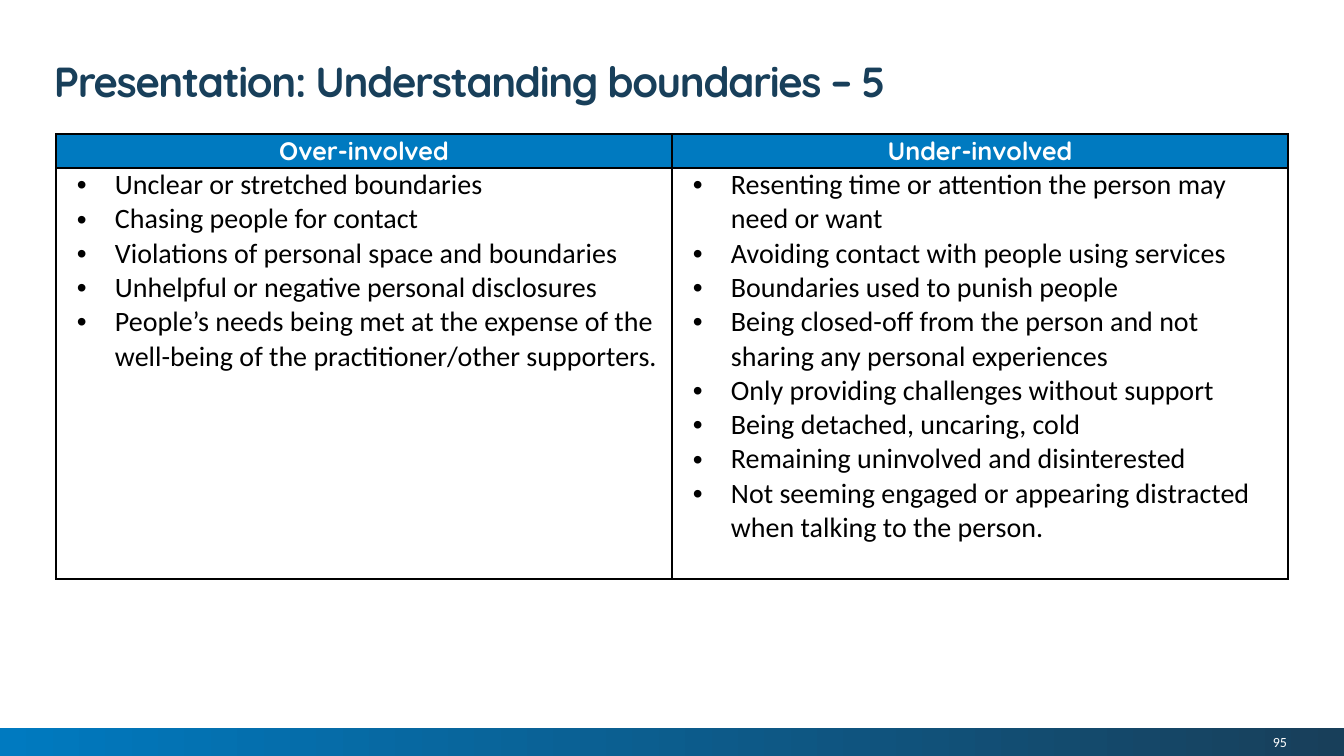
from lxml.etree import SubElement
from pptx import Presentation
from pptx.dml.color import RGBColor
from pptx.enum.shapes import MSO_SHAPE as Shape
from pptx.enum.text import MSO_ANCHOR as Anchor, PP_ALIGN as Align
from pptx.oxml.ns import qn
from pptx.util import Pt

PX = 914400 / 100.8
BLUE = RGBColor(0x00, 0x7A, 0xC0)
NAVY = RGBColor(0x18, 0x3F, 0x5A)
WHITE = RGBColor(0xFF, 0xFF, 0xFF)
BLACK = RGBColor(0x00, 0x00, 0x00)
HEADING_FONT = "Quicksand"
BODY_FONT = "Calibri"

COLUMNS = {
    "Over-involved": [
        "Unclear or stretched boundaries",
        "Chasing people for contact",
        "Violations of personal space and boundaries",
        "Unhelpful or negative personal disclosures",
        "People’s needs being met at the expense of the well-being of the "
        "practitioner/other supporters.",
    ],
    "Under-involved": [
        "Resenting time or attention the person may need or want",
        "Avoiding contact with people using services",
        "Boundaries used to punish people",
        "Being closed-off from the person and not sharing any personal experiences",
        "Only providing challenges without support",
        "Being detached, uncaring, cold",
        "Remaining uninvolved and disinterested",
        "Not seeming engaged or appearing distracted when talking to the person.",
    ],
}


def px(*lengths):
    """Turn pixel lengths into a list of EMU lengths."""
    return [round(length * PX) for length in lengths]


def style_runs(paragraph, font_name, size, color, bold=False):
    """Format every run of a paragraph."""
    for run in paragraph.runs:
        run.font.name = font_name
        run.font.size = Pt(size)
        run.font.bold = bold
        run.font.color.rgb = color


def add_text(slide, box, text, font_name, size, color, bold=False):
    """Add a one-paragraph text box and return its frame and paragraph."""
    text_frame = slide.shapes.add_textbox(*px(*box)).text_frame
    text_frame.word_wrap = True
    text_frame.text = text
    paragraph = text_frame.paragraphs[0]
    style_runs(paragraph, font_name, size, color, bold)
    return text_frame, paragraph


def add_title(slide, text):
    """Add the slide title with tightened letters."""
    paragraph = add_text(slide, (44, 55, 1080, 47), text, HEADING_FONT, 30, NAVY, True)[1]
    paragraph.line_spacing = Pt(33)
    paragraph.runs[0].font._element.set("spc", "-100")


def add_footer(slide, number):
    """Add the gradient band and the slide number."""
    band = slide.shapes.add_shape(Shape.RECTANGLE, *px(0, 728, 1344, 28))
    band.shadow.inherit = False
    band.line.fill.background()
    band.fill.gradient()
    band.fill.gradient_angle = 0
    for stop, color, position in zip(band.fill.gradient_stops, (BLUE, NAVY), (0, 1)):
        stop.color.rgb = color
        stop.position = position
    text_frame, paragraph = add_text(slide, (1106, 730, 181, 24), number, BODY_FONT, 10, WHITE)
    text_frame.margin_left = text_frame.margin_right = 0
    text_frame.margin_top = text_frame.margin_bottom = 0
    text_frame.vertical_anchor = Anchor.MIDDLE
    paragraph.alignment = Align.RIGHT


def add_bullet(paragraph):
    """Give a paragraph a hanging round bullet."""
    properties = paragraph._p.get_or_add_pPr()
    indent, hanging = px(50, 38)
    properties.set("marL", str(indent))
    properties.set("indent", str(-hanging))
    SubElement(properties, qn("a:buFont"), typeface="Arial")
    SubElement(properties, qn("a:buChar"), char="•")


def prepare_cell(cell):
    """Set the margins and thin black borders of a cell."""
    cell.margin_left, cell.margin_right = px(9, 9)
    cell.margin_top = cell.margin_bottom = 0
    properties = cell._tc.get_or_add_tcPr()
    for side in ("lnL", "lnR", "lnT", "lnB"):
        border = SubElement(properties, qn(f"a:{side}"), w=str(Pt(1)))
        fill = SubElement(border, qn("a:solidFill"))
        SubElement(fill, qn("a:srgbClr"), val=str(BLACK))


def fill_header(cell, heading):
    """Write a column heading on blue."""
    prepare_cell(cell)
    cell.fill.solid()
    cell.fill.fore_color.rgb = BLUE
    cell.vertical_anchor = Anchor.MIDDLE
    cell.text_frame.text = heading
    paragraph = cell.text_frame.paragraphs[0]
    paragraph.alignment = Align.CENTER
    style_runs(paragraph, HEADING_FONT, 18, WHITE, True)


def fill_list(cell, items):
    """Write a bulleted list in a cell."""
    prepare_cell(cell)
    cell.fill.background()
    cell.text_frame.text = "\n".join(items)
    for paragraph in cell.text_frame.paragraphs:
        add_bullet(paragraph)
        style_runs(paragraph, BODY_FONT, 20, BLACK)


def add_comparison(slide):
    """Add the two-column comparison table."""
    table = slide.shapes.add_table(2, len(COLUMNS), *px(56, 134, 1232, 445)).table
    table.horz_banding = False
    for row, height in zip(table.rows, px(34, 411)):
        row.height = height
    for index, (heading, items) in enumerate(COLUMNS.items()):
        fill_header(table.cell(0, index), heading)
        fill_list(table.cell(1, index), items)


def main():
    """Build and save the slide."""
    presentation = Presentation()
    presentation.slide_width, presentation.slide_height = px(1344, 756)
    slide = presentation.slides.add_slide(presentation.slide_layouts[6])
    add_footer(slide, "95")
    add_comparison(slide)
    add_title(slide, "Presentation: Understanding boundaries – 5")
    presentation.save("out.pptx")


if __name__ == "__main__":
    main()
